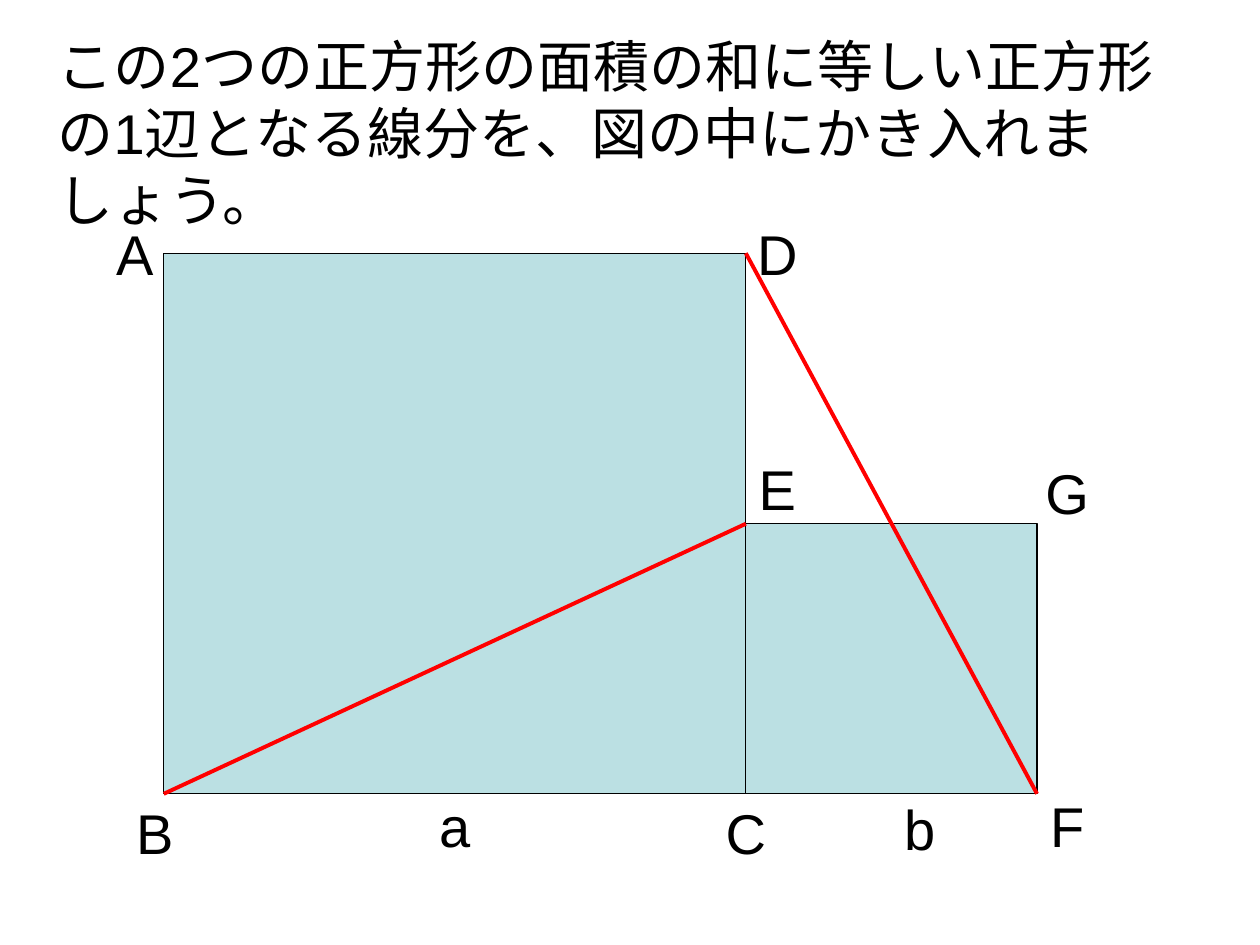
from dataclasses import dataclass

from lxml import etree
from pptx import Presentation
from pptx.dml.color import RGBColor
from pptx.enum.shapes import MSO_CONNECTOR, MSO_SHAPE
from pptx.enum.text import MSO_AUTO_SIZE, PP_ALIGN
from pptx.oxml.ns import qn
from pptx.util import Pt

RECTANGLE = MSO_SHAPE.RECTANGLE
STRAIGHT = MSO_CONNECTOR.STRAIGHT
FIT_SHAPE = MSO_AUTO_SIZE.SHAPE_TO_FIT_TEXT
LEFT, CENTER = PP_ALIGN.LEFT, PP_ALIGN.CENTER


@dataclass(frozen=True)
class Theme:
    ink: RGBColor = RGBColor(0x00, 0x00, 0x00)
    square: RGBColor = RGBColor(0xBB, 0xE0, 0xE3)
    segment: RGBColor = RGBColor(0xFF, 0x00, 0x00)
    font: str = "Arial"
    size: float = 32
    outline: float = 0.75
    segment_width: float = 2.25


THEME = Theme()

QUESTION = "この2つの正方形の面積の和に等しい正方形の1辺となる線分を、図の中にかき入れましょう。"

LABEL_WIDTH, LABEL_HEIGHT = 59, 46

POINTS = {
    "A": (93.6, 144.7),
    "B": (93.6, 453.6),
    "C": (426.2, 453.6),
    "D": (426.2, 144.7),
    "E": (426.2, 299.3),
    "F": (592.6, 453.6),
    "G": (592.6, 299.3),
}

SQUARES = [("A", "C"), ("E", "F")]
SEGMENTS = [("D", "F"), ("B", "E")]

LABELS = {
    "A": (47.5, 121.7),
    "b": (496.1, 450.7),
    "B": (59, 452.9),
    "D": (414.7, 121.7),
    "C": (396.7, 452.9),
    "E": (414.7, 256.3),
    "G": (580.3, 258.5),
    "F": (580.3, 448.6),
    "a": (230.4, 448.6),
}


def add_text(slide, text, left, top, width, height, align=LEFT,
             size=THEME.size, color=THEME.ink):
    box = slide.shapes.add_textbox(Pt(left), Pt(top), Pt(width), Pt(height))
    frame = box.text_frame
    frame.word_wrap = True
    frame.auto_size = FIT_SHAPE
    paragraph = frame.paragraphs[0]
    paragraph.alignment = align
    run = paragraph.add_run()
    run.text = text
    run.font.name = THEME.font
    run.font.size = Pt(size)
    run.font.color.rgb = color


def add_square(slide, top_left, bottom_right):
    left, top = POINTS[top_left]
    right, bottom = POINTS[bottom_right]
    square = slide.shapes.add_shape(
        RECTANGLE, Pt(left), Pt(top), Pt(right - left), Pt(bottom - top))
    square.shadow.inherit = False
    square.fill.solid()
    square.fill.fore_color.rgb = THEME.square
    square.line.color.rgb = THEME.ink
    square.line.width = Pt(THEME.outline)


def add_segment(slide, start, end):
    corners = [Pt(value) for value in POINTS[start] + POINTS[end]]
    segment = slide.shapes.add_connector(STRAIGHT, *corners)
    segment.line.color.rgb = THEME.segment
    segment.line.width = Pt(THEME.segment_width)
    etree.SubElement(segment._element.spPr, qn("a:effectLst"))


def main():
    deck = Presentation()
    deck.slide_width, deck.slide_height = Pt(720), Pt(540)
    slide = deck.slides.add_slide(deck.slide_layouts[6])

    add_text(slide, QUESTION, 25.9, 14.4, 665.3, 85)
    for corners in SQUARES:
        add_square(slide, *corners)
    for name, (left, top) in LABELS.items():
        add_text(slide, name, left, top, LABEL_WIDTH, LABEL_HEIGHT, align=CENTER)
    for ends in SEGMENTS:
        add_segment(slide, *ends)

    deck.save("out.pptx")


if __name__ == "__main__":
    main()
